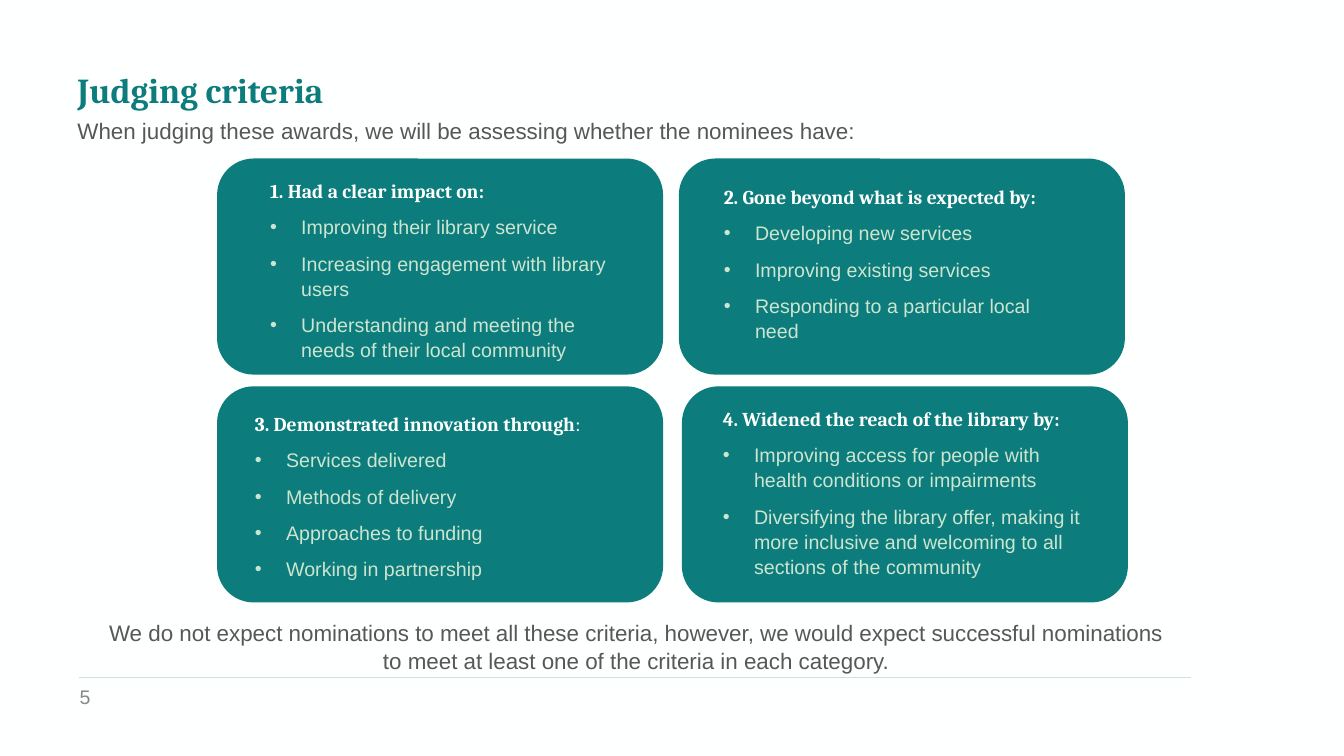
from dataclasses import dataclass

from lxml import etree
from pptx import Presentation
from pptx.dml.color import RGBColor
from pptx.enum.shapes import MSO_CONNECTOR, MSO_SHAPE
from pptx.enum.text import MSO_ANCHOR, PP_ALIGN
from pptx.oxml.ns import qn
from pptx.util import Inches, Pt

ROUNDED = MSO_SHAPE.ROUNDED_RECTANGLE
STRAIGHT = MSO_CONNECTOR.STRAIGHT
CENTER = PP_ALIGN.CENTER
MIDDLE = MSO_ANCHOR.MIDDLE


@dataclass(frozen=True)
class Theme:
    paper: str = "FEFFFF"
    teal: str = "0D7C7C"
    mint: str = "CCE5D0"
    body: str = "575756"
    muted: str = "878787"
    serif: str = "Cambria"
    sans: str = "Arial"
    title_size: int = 25
    lead_size: int = 16
    card_size: int = 14


THEME = Theme()
CARD_WIDTH, CARD_HEIGHT = 4.41, 2.13

# Card corner, text box, heading runs as (text, bold), bullets
CRITERIA = [
    ((2.16, 1.58), (2.58, 1.71, 3.56, 2.31),
     [("1. Had a clear impact on:", True)],
     ["Improving their library service",
      "Increasing engagement with library users",
      "Understanding and meeting the needs of their local community"]),
    ((6.74, 1.58), (7.08, 1.77, 3.72, 1.69),
     [("2. Gone beyond what is expected by:", True)],
     ["Developing new services",
      "Improving existing services",
      "Responding to a particular local need"]),
    ((2.16, 3.84), (2.43, 4.02, 3.86, 1.8),
     [("3. Demonstrated innovation through", True), (":", False)],
     ["Services delivered",
      "Methods of delivery",
      "Approaches to funding",
      "Working in partnership"]),
    ((6.77, 3.84), (7.07, 3.97, 3.82, 1.83),
     [("4. Widened the reach of the library by:", True)],
     ["Improving access for people with health conditions or impairments",
      "Diversifying the library offer, making it more inclusive and "
      "welcoming to all sections of the community"]),
]


def rgb(value):
    return RGBColor.from_string(value)


def add_run(para, text, size, color, font=THEME.sans, bold=False):
    run = para.add_run()
    run.text = text
    run.font.name = font
    run.font.size = Pt(size)
    run.font.bold = bold
    run.font.color.rgb = rgb(color)


def add_box(page, span):
    box = page.shapes.add_textbox(*map(Inches, span))
    box.text_frame.word_wrap = True
    return box.text_frame


def set_spacing(para):
    para.line_spacing = 1.07
    para.space_after = Pt(8)


def set_bullet(para):
    props = para._p.get_or_add_pPr()
    props.set("marL", str(Inches(0.31)))
    props.set("indent", str(Inches(-0.31)))
    etree.SubElement(props, qn("a:buFont")).set("typeface", THEME.sans)
    etree.SubElement(props, qn("a:buChar")).set("char", "•")


def add_card(page, corner, text_span, heading, bullets):
    card = page.shapes.add_shape(
        ROUNDED, *map(Inches, (*corner, CARD_WIDTH, CARD_HEIGHT)))
    card.shadow.inherit = False
    card.fill.solid()
    card.fill.fore_color.rgb = rgb(THEME.teal)
    card.line.color.rgb = rgb(THEME.teal)
    card.line.width = Pt(1)

    frame = add_box(page, text_span)
    para = frame.paragraphs[0]
    set_spacing(para)
    for text, bold in heading:
        add_run(para, text, THEME.card_size, THEME.paper, THEME.serif, bold)
    for text in bullets:
        para = frame.add_paragraph()
        set_bullet(para)
        set_spacing(para)
        add_run(para, text, THEME.card_size, THEME.mint)


def add_footer(page):
    rule = page.shapes.add_connector(
        STRAIGHT, *map(Inches, (0.78, 6.72, 11.81, 6.72)))
    rule.line.color.rgb = rgb(THEME.mint)
    rule.line.width = Pt(0.5)
    etree.SubElement(rule._element.spPr, qn("a:effectLst"))
    frame = add_box(page, (0.69, 6.71, 1.01, 0.4))
    frame.vertical_anchor = MIDDLE
    add_run(frame.paragraphs[0], "5", THEME.card_size, THEME.muted)


def add_header(page):
    title = add_box(page, (0.67, 0.68, 8.19, 0.45)).paragraphs[0]
    title.line_spacing = 0.9
    add_run(title, "Judging criteria", THEME.title_size, THEME.teal,
            THEME.serif, True)
    lead = add_box(page, (0.67, 1.11, 11.24, 0.67)).paragraphs[0]
    add_run(lead, "When judging these awards, we will be assessing whether "
            "the nominees have:", THEME.lead_size, THEME.body)


def add_closing(page):
    para = add_box(page, (0.87, 6.07, 10.88, 0.67)).paragraphs[0]
    para.alignment = CENTER
    set_spacing(para)
    add_run(para, "We do not expect nominations to meet all these criteria, "
            "however, we would expect successful nominations to meet at least "
            "one of the criteria in each category.",
            THEME.lead_size, THEME.body)


def main():
    deck = Presentation()
    deck.slide_width, deck.slide_height = Inches(13.33), Inches(7.5)
    page = deck.slides.add_slide(deck.slide_layouts[6])
    page.background.fill.solid()
    page.background.fill.fore_color.rgb = rgb(THEME.paper)
    add_footer(page)
    add_header(page)
    add_closing(page)
    for criterion in CRITERIA:
        add_card(page, *criterion)
    deck.save("out.pptx")


if __name__ == "__main__":
    main()
